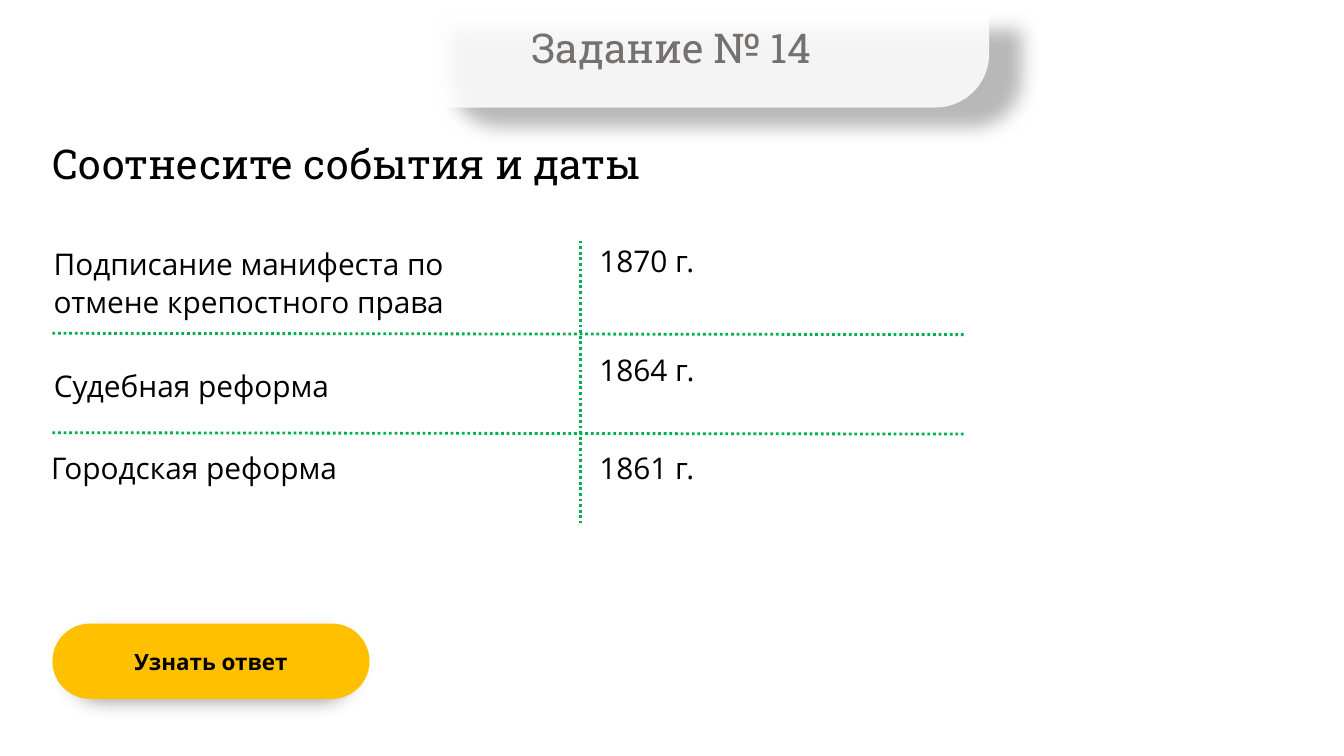
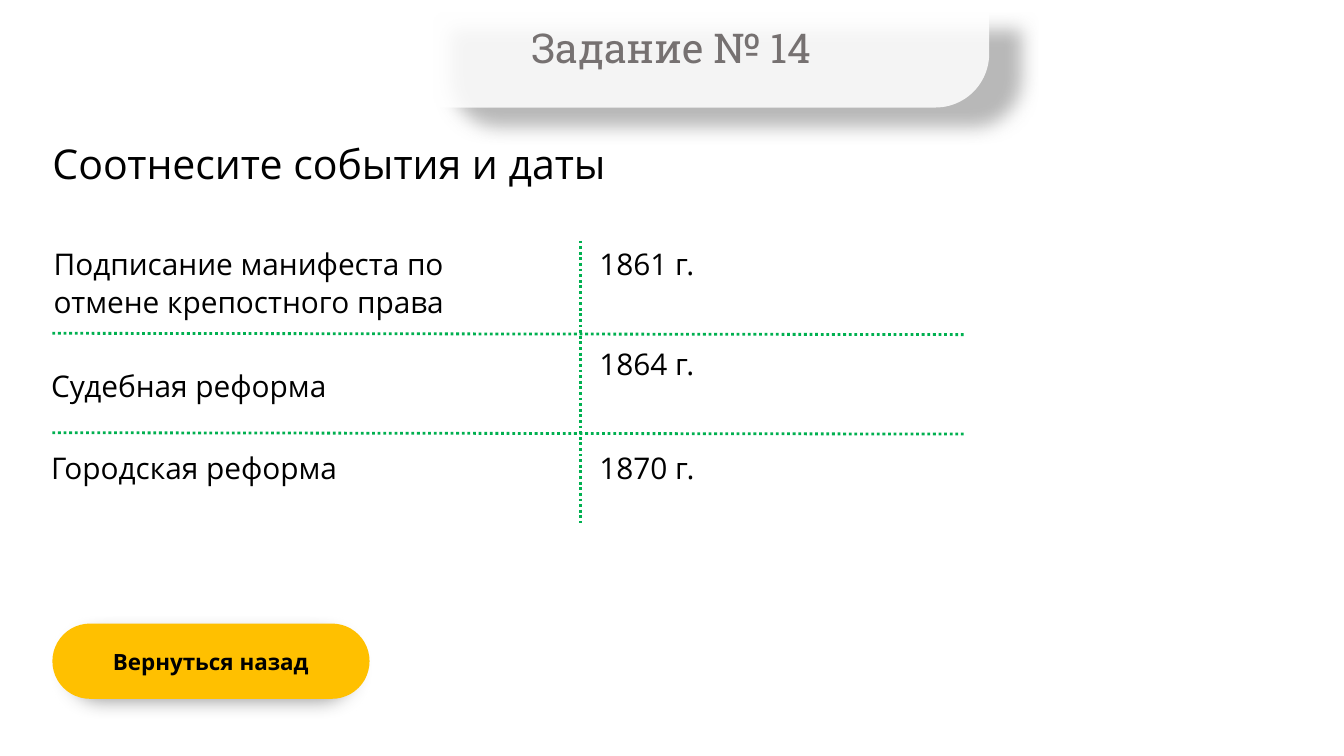
"""Builds a two-slide matching task: the question and its answer."""
from lxml import etree
from pptx import Presentation
from pptx.dml.color import RGBColor
from pptx.enum.dml import MSO_LINE
from pptx.enum.shapes import MSO_CONNECTOR, MSO_SHAPE
from pptx.enum.text import MSO_ANCHOR, MSO_AUTO_SIZE, PP_ALIGN
from pptx.oxml import parse_xml
from pptx.oxml.ns import nsdecls, qn
from pptx.util import Inches, Pt

WHITE = RGBColor(0xFF, 0xFF, 0xFF)
BLACK = RGBColor(0x00, 0x00, 0x00)
GREY = RGBColor(0x76, 0x71, 0x71)
GREEN = RGBColor(0x00, 0xB0, 0x50)
YELLOW = RGBColor(0xFF, 0xC0, 0x00)
BAND_SHADOW = RGBColor(0x59, 0x59, 0x59)
BUTTON_SHADOW = RGBColor(0x40, 0x40, 0x40)
SLAB, SANS = "Roboto Slab", "Open Sans"
CENTER, MIDDLE = PP_ALIGN.CENTER, MSO_ANCHOR.MIDDLE
GROW, DOTTED = MSO_AUTO_SIZE.SHAPE_TO_FIT_TEXT, MSO_LINE.ROUND_DOT
STRAIGHT = MSO_CONNECTOR.STRAIGHT
BAND, PILL = MSO_SHAPE.ROUND_2_SAME_RECTANGLE, MSO_SHAPE.ROUNDED_RECTANGLE

WIDTH = 10
HEIGHT = WIDTH * 9 / 16
MARGIN = 0.39
DIVIDER = 4.32
TABLE_TOP, TABLE_BOTTOM, TABLE_RIGHT = 1.79, 3.89, 7.17
ROW_RULES = (2.48, 3.22)
EVENT_TOPS = (1.81, 2.72, 3.33)
CELL_HEIGHT = 0.27
CELL_INSETS = (0.14, 0, 0, 0)

TITLE = "Задание № 14"
HEADING = "Соотнесите события и даты"
EVENTS = (
    ("Подписание манифеста по отмене крепостного права", 3.16, 2),
    ("Судебная реформа", 3.85, 1),
    ("Городская реформа", 3.85, 1),
)
SLIDES = (
    {
        "button": "Узнать ответ",
        "heading_font": SLAB,
        "event_lefts": (0.26, 0.26, 0.24),
        "dates": (("1870 г.", 1.79, 1.84), ("1864 г.", 2.6, 2.45), ("1861 г.", 3.33, 1.84)),
    },
    {
        "button": "Вернуться назад",
        "heading_font": SANS,
        "event_lefts": (0.26, 0.24, 0.24),
        "dates": (("1861 г.", 1.81, 1.84), ("1864 г.", 2.56, 1.84), ("1870 г.", 3.33, 2.45)),
    },
)


def write(shape, text, size, font=SANS, color=BLACK, insets=(0.1, 0.05, 0.1, 0.05),
          spacing=None, align=None, bold=False, wrap=True):
    frame = shape.text_frame
    frame.word_wrap = wrap
    frame.auto_size = GROW
    (frame.margin_left, frame.margin_top,
     frame.margin_right, frame.margin_bottom) = map(Inches, insets)
    frame.text = text
    para = frame.paragraphs[0]
    para.alignment = align
    para.line_spacing = spacing
    span = para.runs[0]
    span.font.name, span.font.size, span.font.bold = font, Pt(size), bold
    span.font.color.rgb = color


def add_text(page, place, text, size, **style):
    box = page.shapes.add_textbox(*map(Inches, place))
    write(box, text, size, **style)


def add_panel(page, kind, place, adjustment, fill, shadow, distance):
    panel = page.shapes.add_shape(kind, *map(Inches, place))
    panel.adjustments[0] = adjustment
    panel.fill.solid()
    panel.fill.fore_color.rgb = fill
    panel.line.fill.background()
    panel._element.spPr.append(parse_xml(
        f'<a:effectLst {nsdecls("a")}><a:outerShdw blurRad="{Pt(10)}" '
        f'dist="{Pt(distance)}" dir="5400000" sx="90000" sy="90000" algn="t" '
        f'rotWithShape="0"><a:srgbClr val="{shadow}"><a:alpha val="50000"/>'
        '</a:srgbClr></a:outerShdw></a:effectLst>'))
    return panel


def add_rule(page, *ends):
    rule = page.shapes.add_connector(STRAIGHT, *map(Inches, ends))
    rule.line.color.rgb = GREEN
    rule.line.width = Pt(1.5)
    rule.line.dash_style = DOTTED
    etree.SubElement(rule._element.spPr, qn("a:effectLst"))


def add_frame(page, button_text, heading_font):
    band = add_panel(page, BAND, (2.64, 0, 4.72, 0.8), 0.5, WHITE, BAND_SHADOW, 10)
    band.rotation = 180
    color = band._element.spPr.find(".//" + qn("a:srgbClr"))
    etree.SubElement(color, qn("a:alpha"), val="85000")
    add_text(page, (3.84, 0.12, 2.31, 0.47), TITLE, 22, font=SLAB, color=GREY,
             align=CENTER, wrap=False)
    button = add_panel(page, PILL, (MARGIN, 4.64, 2.36, 0.56), 0.5, YELLOW,
                       BUTTON_SHADOW, 5)
    write(button, button_text, 12, insets=(0.2, 0.1, 0.2, 0.1), align=CENTER, bold=True)
    button.text_frame.vertical_anchor = MIDDLE
    add_text(page, (MARGIN, 0.98, WIDTH - 2 * MARGIN, 0.39), HEADING, 22,
             font=heading_font, insets=(0, 0, 0, 0), spacing=1.14)


def add_matching(page, event_lefts, dates):
    cell = {"insets": CELL_INSETS, "spacing": 1.06}
    for (event, width, lines), left, top in zip(EVENTS, event_lefts, EVENT_TOPS):
        add_text(page, (left, top, width, lines * CELL_HEIGHT), event, 16, **cell)
    add_rule(page, DIVIDER, TABLE_TOP, DIVIDER, TABLE_BOTTOM)
    for top in ROW_RULES:
        add_rule(page, MARGIN, top, TABLE_RIGHT, top + 0.01)
    for date, top, width in dates:
        add_text(page, (DIVIDER, top, width, CELL_HEIGHT), date, 16, **cell)


def main():
    deck = Presentation()
    deck.slide_width, deck.slide_height = Inches(WIDTH), Inches(HEIGHT)
    for content in SLIDES:
        page = deck.slides.add_slide(deck.slide_layouts[6])
        add_frame(page, content["button"], content["heading_font"])
        add_matching(page, content["event_lefts"], content["dates"])
    deck.save("out.pptx")


if __name__ == "__main__":
    main()
